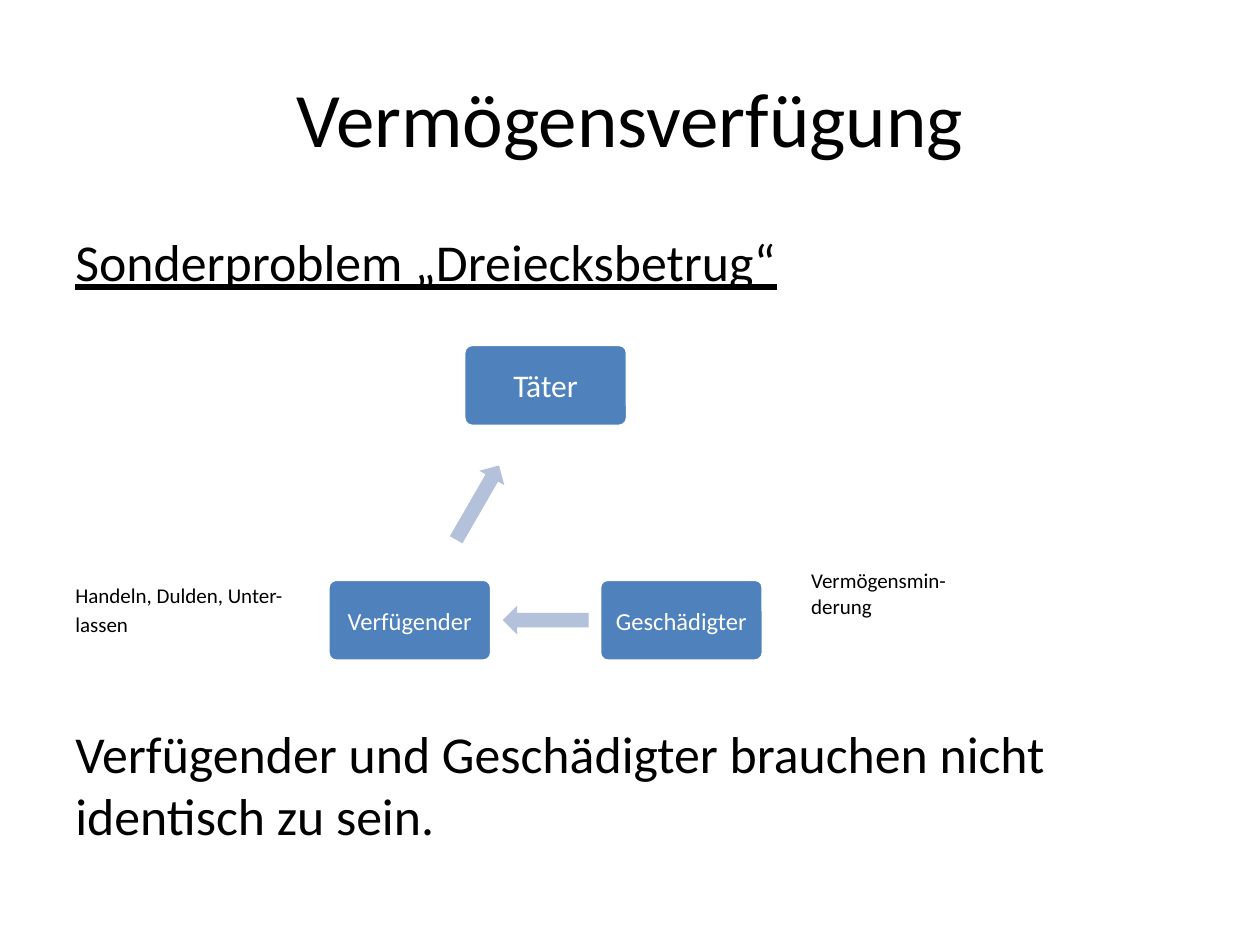
import pptx
import pptx.util
import pptx.dml.color
import pptx.enum.shapes
import pptx.enum.text

Pt = pptx.util.Pt
SHAPE = pptx.enum.shapes.MSO_SHAPE
ALIGN = pptx.enum.text.PP_ALIGN
ANCHOR = pptx.enum.text.MSO_ANCHOR


def color(hex_string):
    return pptx.dml.color.RGBColor.from_string(hex_string)


def write(frame, para, text, size, ink="000000", **formats):
    """Put one formatted run into a paragraph of a wrapping frame."""
    frame.word_wrap = True
    span = para.add_run()
    span.text = text
    span.font.color.rgb = color(ink)
    for name, value in {"name": "Calibri", "size": Pt(size), **formats}.items():
        setattr(span.font, name, value)


deck = pptx.Presentation()
deck.slide_width, deck.slide_height = Pt(720), Pt(540)
page = deck.slides.add_slide(deck.slide_layouts[6])

# Title
box = page.shapes.add_textbox(Pt(36), Pt(21.6), Pt(648), Pt(90))
frame = box.text_frame
frame.vertical_anchor = ANCHOR.MIDDLE
frame.paragraphs[0].alignment = ALIGN.CENTER
write(frame, frame.paragraphs[0], "Vermögensverfügung", 44)

# Body: text, size, underline, space before (leaves room for the diagram)
body_lines = [
    ("Sonderproblem „Dreiecksbetrug“", 29.6, True, 0),
    ("Handeln, Dulden, Unter-", 12, False, 166),
    ("lassen", 12, False, 2),
    ("Verfügender und Geschädigter brauchen nicht identisch zu sein.", 29.6, False, 48.5),
]
box = page.shapes.add_textbox(Pt(36), Pt(126), Pt(648), Pt(356.4))
frame = box.text_frame
frame.margin_top = Pt(5.5)
for index, (text, size, underline, gap) in enumerate(body_lines):
    para = frame.add_paragraph() if index else frame.paragraphs[0]
    para.space_before = Pt(gap)
    write(frame, para, text, size, underline=underline)

# Triangle of parties: label, left, top, text size
nodes = [
    ("Täter", 265, 196.8, 18),
    ("Geschädigter", 342.6, 331, 14),
    ("Verfügender", 187.4, 331, 14),
]
for label, left, top, size in nodes:
    node = page.shapes.add_shape(SHAPE.ROUNDED_RECTANGLE, Pt(left), Pt(top), Pt(93.6), Pt(46.8))
    node.adjustments[0] = 0.1
    node.shadow.inherit = False
    node.fill.solid()
    node.fill.fore_color.rgb = color("4F81BD")
    node.line.color.rgb = color("FFFFFF")
    node.line.width = Pt(2)
    frame = node.text_frame
    for name in ("margin_left", "margin_right", "margin_top", "margin_bottom"):
        setattr(frame, name, Pt(3))
    frame.vertical_anchor = ANCHOR.MIDDLE
    frame.paragraphs[0].alignment = ALIGN.CENTER
    write(frame, frame.paragraphs[0], label, size, "FFFFFF")

# Arrows between the parties: preset, left, top, rotation
arrows = [
    (SHAPE.LEFT_ARROW, 287.3, 346.2, 0),
    (SHAPE.RIGHT_ARROW, 248.4, 279, 300),
]
for preset, left, top, rotation in arrows:
    arrow = page.shapes.add_shape(preset, Pt(left), Pt(top), Pt(49), Pt(16.4))
    arrow.rotation = rotation
    arrow.shadow.inherit = False
    arrow.fill.solid()
    arrow.fill.fore_color.rgb = color("B3C1DB")
    arrow.line.fill.background()

# Note beside the injured party
box = page.shapes.add_textbox(Pt(456.5), Pt(321), Pt(113), Pt(36))
write(box.text_frame, box.text_frame.paragraphs[0], "Vermögensmin-derung", 12)

deck.save("out.pptx")
